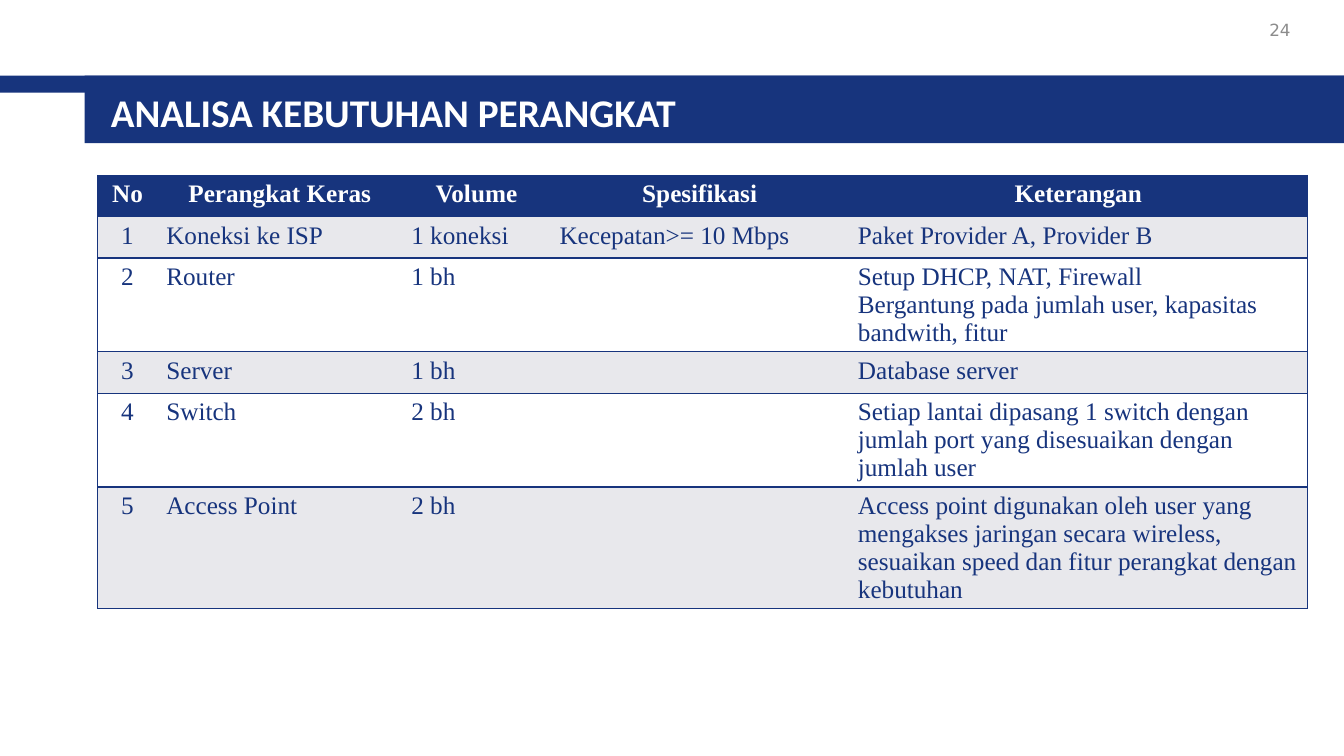
from lxml import etree
from pptx import Presentation
from pptx.dml.color import RGBColor
from pptx.enum import shapes, text
from pptx.oxml.ns import qn
from pptx.util import Inches, Pt

COLORS = {"navy": "17347D", "band": "E8E8EC", "white": "FFFFFF", "gray": "8C8C8C"}
HEADERS = ["No", "Perangkat Keras", "Volume", "Spesifikasi", "Keterangan"]
DEVICES = [
    ["Koneksi ke ISP", "1 koneksi", "Kecepatan>= 10 Mbps", "Paket Provider A, Provider B"],
    ["Router", "1 bh", "",
     "Setup DHCP, NAT, Firewall\nBergantung pada jumlah user, kapasitas bandwith, fitur"],
    ["Server", "1 bh", "", "Database server"],
    ["Switch", "2 bh", "",
     "Setiap lantai dipasang 1 switch dengan jumlah port yang disesuaikan dengan jumlah user"],
    ["Access Point", "2 bh", "",
     "Access point digunakan oleh user yang mengakses jaringan secara wireless, "
     "sesuaikan speed dan fitur perangkat dengan kebutuhan"],
]
COL_WIDTHS = [0.59, 2.43, 1.47, 2.96, 4.55]
ROW_HEIGHT = 0.41


def add_run(p, content, font, size, color, bold=False):
    r = p.add_run()
    r.text = content
    r.font.name = font
    r.font.size = Pt(size)
    r.font.bold = bold
    r.font.color.rgb = RGBColor.from_string(COLORS[color])


def set_borders(cell, sides):
    """Draw the given sides (L, R, T, B) in navy and clear the others."""
    tcPr = cell._tc.get_or_add_tcPr()
    for side in "LRTB":
        ln = etree.SubElement(tcPr, qn(f"a:ln{side}"), w=str(Pt(1)))
        if side in sides:
            fill = etree.SubElement(ln, qn("a:solidFill"))
            etree.SubElement(fill, qn("a:srgbClr"), val=COLORS["navy"])
        else:
            etree.SubElement(ln, qn("a:noFill"))


prs = Presentation()
prs.slide_width, prs.slide_height = Inches(13.33), Inches(7.5)
s = prs.slides.add_slide(prs.slide_layouts[5])

# Title over the stepped navy band
title = s.shapes.title
title.left, title.top = Inches(1), Inches(0.8)
title.width, title.height = Inches(11.89), Inches(0.62)
tf = title.text_frame
tf.vertical_anchor = text.MSO_ANCHOR.MIDDLE
p = tf.paragraphs[0]
p.alignment = text.PP_ALIGN.LEFT
add_run(p, "ANALISA KEBUTUHAN PERANGKAT", "Calibri", 28, "white", bold=True)

for left, width, height in [(0, 13.33, 0.17), (0.84, 12.49, 0.67)]:
    bar = s.shapes.add_shape(shapes.MSO_SHAPE.RECTANGLE, Inches(left), Inches(0.75),
                             Inches(width), Inches(height))
    bar.shadow.inherit = False
    bar.fill.solid()
    bar.fill.fore_color.rgb = RGBColor.from_string(COLORS["navy"])
    bar.line.fill.background()
    title.element.addprevious(bar.element)

# Device table
rows = [HEADERS] + [[str(n), *device] for n, device in enumerate(DEVICES, 1)]
table = s.shapes.add_table(len(rows), len(HEADERS), Inches(0.97), Inches(1.74),
                           Inches(sum(COL_WIDTHS)), Inches(ROW_HEIGHT * len(rows))).table
for column, width in zip(table.columns, COL_WIDTHS):
    column.width = Inches(width)

for i, row in enumerate(rows):
    table.rows[i].height = Inches(ROW_HEIGHT)
    header = i == 0
    fill = "navy" if header else "band" if i % 2 else "white"
    for j, content in enumerate(row):
        cell = table.cell(i, j)
        cell.margin_left = cell.margin_right = Inches(0.09)
        cell.margin_top = cell.margin_bottom = Inches(0.05)
        set_borders(cell, "TB" + ("L" if j == 0 else "R" if j == len(row) - 1 else ""))
        cell.fill.solid()
        cell.fill.fore_color.rgb = RGBColor.from_string(COLORS[fill])
        if not content:
            continue
        tf = cell.text_frame
        for k, line in enumerate(content.split("\n")):
            p = tf.add_paragraph() if k else tf.paragraphs[0]
            centered = header or j == 0
            p.alignment = text.PP_ALIGN.CENTER if centered else text.PP_ALIGN.LEFT
            add_run(p, line, "Times New Roman", 18, "white" if header else "navy", bold=header)

# Slide number
number = s.shapes.add_textbox(Inches(9.9), Inches(0.15), Inches(3), Inches(0.4))
tf = number.text_frame
tf.word_wrap = True
p = tf.paragraphs[0]
p.alignment = text.PP_ALIGN.RIGHT
add_run(p, "24", "DejaVu Sans", 12, "gray")

prs.save("out.pptx")
